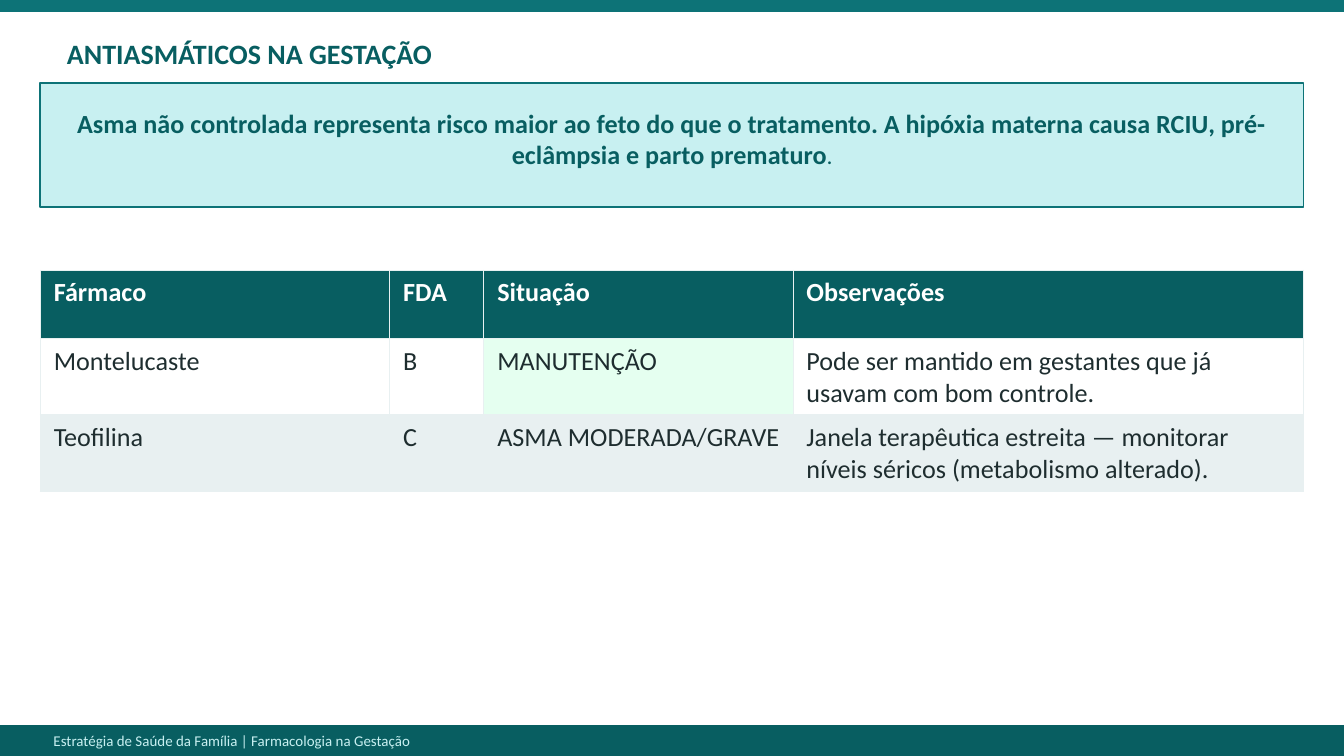
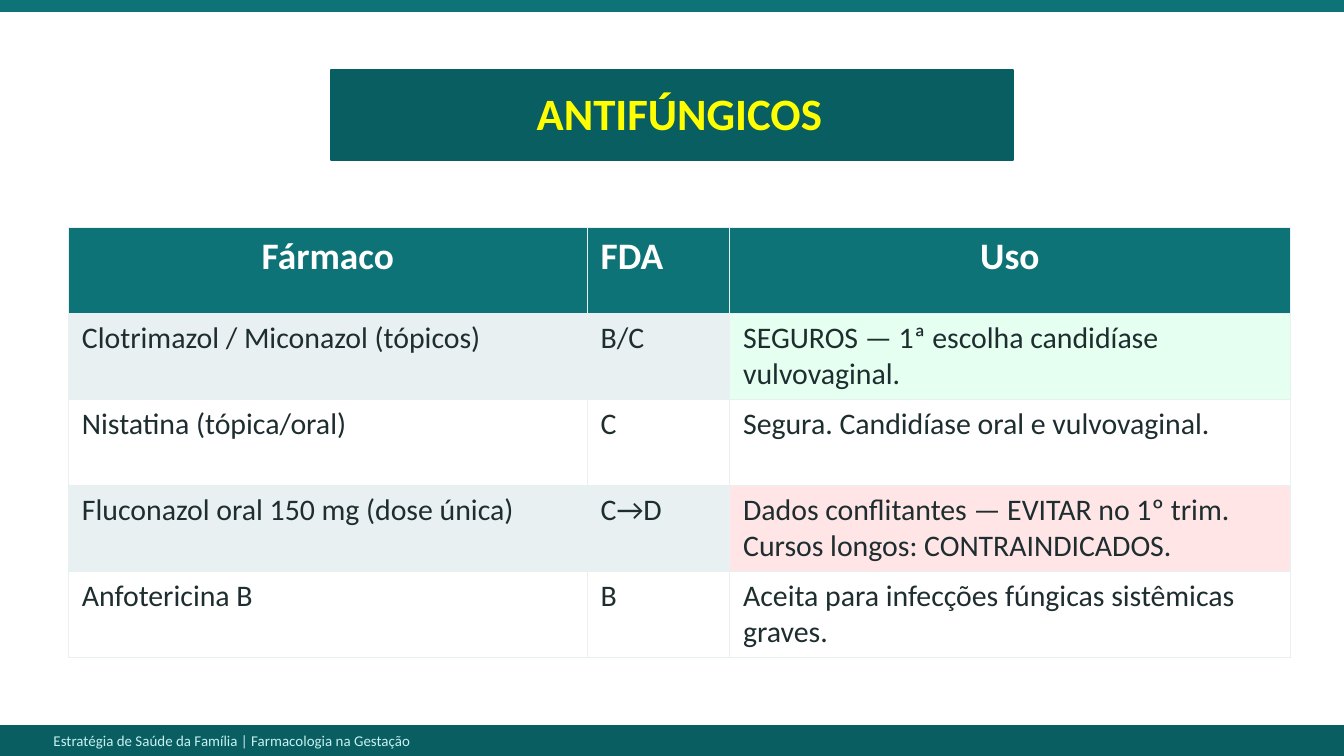
from lxml import etree
from pptx import Presentation
from pptx.dml.color import RGBColor
from pptx.enum.shapes import MSO_SHAPE
from pptx.enum.text import MSO_ANCHOR, PP_ALIGN
from pptx.oxml.ns import qn
from pptx.util import Inches, Pt

FONT = "Calibri"
TEAL, DARK_TEAL, PALE_TEAL = "0D7377", "085E61", "C8F0F1"
WHITE, MIST, INK, YELLOW = "FFFFFF", "E8F0F1", "1E2D2F", "FFFF00"
SAFE, DANGER = "E5FFF0", "FFE5E5"

FOOTER = "Estratégia de Saúde da Família | Farmacologia na Gestação"

ASTHMA_TITLE = "ANTIASMÁTICOS NA GESTAÇÃO"
ASTHMA_WARNING = (
    "Asma não controlada representa risco maior ao feto do que o tratamento. "
    "A hipóxia materna causa RCIU, pré-eclâmpsia e parto prematuro"
)
ASTHMA_TABLE = {
    "left": 0.3, "top": 2.01, "row_height": 0.51,
    "columns": [2.6, 0.7, 2.3, 3.8],
    "header_fill": DARK_TEAL, "header_size": 14, "body_size": 14,
    "bands": [WHITE, MIST],
    "centred_headers": [],
    "highlights": {(1, 2): SAFE},
    "rows": [
        ("Fármaco", "FDA", "Situação", "Observações"),
        ("Montelucaste", "B", "MANUTENÇÃO",
         "Pode ser mantido em gestantes que já usavam com bom controle."),
        ("Teofilina", "C", "ASMA MODERADA/GRAVE",
         "Janela terapêutica estreita — monitorar níveis séricos (metabolismo alterado)."),
    ],
}

ANTIFUNGAL_TITLE = "ANTIFÚNGICOS"
ANTIFUNGAL_TABLE = {
    "left": 0.51, "top": 1.69, "row_height": 0.64,
    "columns": [3.86, 1.06, 4.17],
    "header_fill": TEAL, "header_size": 20, "body_size": 16,
    "bands": [MIST, WHITE],
    "centred_headers": [0, 2],
    "highlights": {(1, 2): SAFE, (3, 2): DANGER},
    "rows": [
        ("Fármaco", "FDA", "Uso"),
        ("Clotrimazol / Miconazol (tópicos)", "B/C",
         "SEGUROS — 1ª escolha candidíase vulvovaginal."),
        ("Nistatina (tópica/oral)", "C", "Segura. Candidíase oral e vulvovaginal."),
        ("Fluconazol oral 150 mg (dose única)", "C→D",
         "Dados conflitantes — EVITAR no 1º trim. Cursos longos: CONTRAINDICADOS."),
        ("Anfotericina B", "B", "Aceita para infecções fúngicas sistêmicas graves."),
    ],
}


def rgb(color):
    return RGBColor.from_string(color)


def style_font(font, size, color, bold=False):
    font.name, font.size, font.bold = FONT, Pt(size), bold
    font.color.rgb = rgb(color)


def add_panel(slide, left, top, width, height, fill, line):
    panel = slide.shapes.add_shape(
        MSO_SHAPE.RECTANGLE, Inches(left), Inches(top), Inches(width), Inches(height))
    panel.shadow.inherit = False
    panel.fill.solid()
    panel.fill.fore_color.rgb = rgb(fill)
    panel.line.color.rgb = rgb(line)
    panel.line.width = Pt(1)


def add_label(slide, left, top, width, height, text, size, color,
              bold=False, align=PP_ALIGN.LEFT, inset=True):
    """Add a one-paragraph text box and return its paragraph."""
    frame = slide.shapes.add_textbox(
        Inches(left), Inches(top), Inches(width), Inches(height)).text_frame
    frame.word_wrap = True
    frame.vertical_anchor = MSO_ANCHOR.MIDDLE
    if not inset:
        frame.margin_left = frame.margin_right = 0
        frame.margin_top = frame.margin_bottom = 0
    paragraph = frame.paragraphs[0]
    paragraph.text = text
    paragraph.alignment = align
    style_font(paragraph.font, size, color, bold)
    return paragraph


def set_borders(cell, color, points):
    properties = cell._tc.get_or_add_tcPr()
    for position, side in enumerate(("a:lnL", "a:lnR", "a:lnT", "a:lnB")):
        line = etree.Element(qn(side), w=str(Pt(points)))
        fill = etree.SubElement(line, qn("a:solidFill"))
        etree.SubElement(fill, qn("a:srgbClr"), val=color)
        properties.insert(position, line)


def add_drug_table(slide, content):
    rows, columns = content["rows"], content["columns"]
    table = slide.shapes.add_table(
        len(rows), len(columns), Inches(content["left"]), Inches(content["top"]),
        Inches(sum(columns)), Inches(content["row_height"] * len(rows))).table
    for column, width in zip(table.columns, columns):
        column.width = Inches(width)
    for r, row in enumerate(rows):
        table.rows[r].height = Inches(content["row_height"])
        header = r == 0
        band = content["header_fill"] if header else content["bands"][(r - 1) % 2]
        for c, text in enumerate(row):
            cell = table.cell(r, c)
            cell.fill.solid()
            cell.fill.fore_color.rgb = rgb(content["highlights"].get((r, c), band))
            set_borders(cell, MIST, 0.5)
            paragraph = cell.text_frame.paragraphs[0]
            paragraph.text = text
            if header and c in content["centred_headers"]:
                paragraph.alignment = PP_ALIGN.CENTER
            style_font(paragraph.font, content["header_size" if header else "body_size"],
                       WHITE if header else INK, header)


def add_framed_slide(deck):
    """Add a blank slide with the top band and the footer."""
    slide = deck.slides.add_slide(deck.slide_layouts[6])
    slide.background.fill.solid()
    slide.background.fill.fore_color.rgb = rgb(WHITE)
    add_panel(slide, 0, 0, 10, 0.08, TEAL, TEAL)
    add_panel(slide, 0, 5.4, 10, 0.23, DARK_TEAL, DARK_TEAL)
    add_label(slide, 0.3, 5.41, 9.4, 0.2, FOOTER, 8, PALE_TEAL)
    return slide


def add_asthma_slide(deck):
    slide = add_framed_slide(deck)
    add_label(slide, 0.4, 0.15, 9.2, 0.5, ASTHMA_TITLE, 15, DARK_TEAL, bold=True)
    add_panel(slide, 0.3, 0.62, 9.4, 0.92, PALE_TEAL, TEAL)
    warning = add_label(slide, 0.45, 0.84, 9.1, 0.38, ASTHMA_WARNING, 14, DARK_TEAL,
                        bold=True, align=PP_ALIGN.CENTER)
    full_stop = warning.add_run()
    full_stop.text = "."
    style_font(full_stop.font, 10, DARK_TEAL, bold=True)
    add_drug_table(slide, ASTHMA_TABLE)


def add_antifungal_slide(deck):
    slide = add_framed_slide(deck)
    add_panel(slide, 2.46, 0.52, 5.08, 0.67, DARK_TEAL, DARK_TEAL)
    add_label(slide, 2.78, 0.69, 4.55, 0.3, ANTIFUNGAL_TITLE, 24, YELLOW,
              bold=True, align=PP_ALIGN.CENTER, inset=False)
    add_drug_table(slide, ANTIFUNGAL_TABLE)


def main():
    deck = Presentation()
    deck.slide_width = Inches(10)
    deck.slide_height = Inches(10) * 9 // 16
    add_asthma_slide(deck)
    add_antifungal_slide(deck)
    deck.save("out.pptx")


if __name__ == "__main__":
    main()
